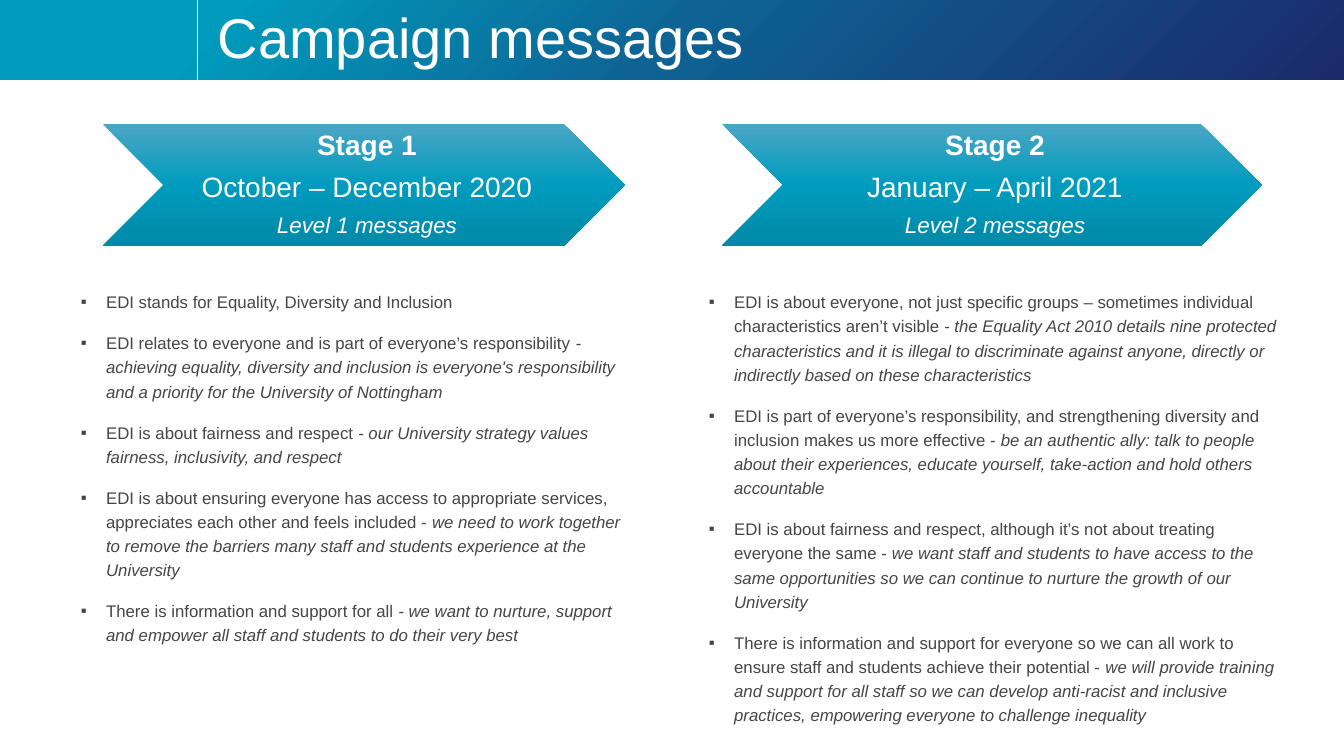
from lxml import etree
from pptx import Presentation, util as u
from pptx.dml.color import RGBColor
from pptx.enum import shapes, text
from pptx.oxml import ns

# Colours
WHITE = RGBColor(0xFF, 0xFF, 0xFF)
GREY = RGBColor(0x45, 0x45, 0x45)
TEAL = RGBColor(0x00, 0x9B, 0xBD)
LIGHT = RGBColor(0x4B, 0xA6, 0xC5)
DARK = RGBColor(0x00, 0x8A, 0xA8)
BLUE = RGBColor(0x0E, 0x63, 0x94)
NAVY = RGBColor(0x1B, 0x2A, 0x6B)

# Gradients as (percent, colour) stops
BAND = [(17, TEAL), (50, BLUE), (100, NAVY)]
ARROW = [(0, LIGHT), (50, TEAL), (100, DARK)]

# Paragraph formats
HEAD = {"line_spacing": 0.9}
STAGE = {"alignment": text.PP_ALIGN.CENTER, "line_spacing": 0.9, "space_after": u.Pt(8)}
BODY = {"line_spacing": 1.2, "space_after": u.Pt(6)}


class Deck:
    """Holds the style and the current slide."""

    font = "Arial"
    scale = 914400 / 100.8

    def __init__(self, wide, high):
        self.prs = Presentation()
        self.prs.slide_width, self.prs.slide_height = self.emu(wide, high)
        self.slide = self.prs.slides.add_slide(self.prs.slide_layouts[6])

    def emu(self, *px):
        return [u.Emu(round(n * self.scale)) for n in px]

    def style(self, item, form):
        for key, value in form.items():
            setattr(item, key, value)

    def shape(self, kind, box, stops, angle):
        item = self.slide.shapes.add_shape(kind, *self.emu(*box))
        item.shadow.inherit = False
        item.line.fill.background()
        item.fill.gradient()
        item.fill.gradient_angle = angle
        # Replace the default stops
        grad = item._element.spPr.find(".//" + ns.qn("a:gsLst"))
        for stop in list(grad):
            grad.remove(stop)
        for pct, color in stops:
            stop = etree.SubElement(grad, ns.qn("a:gs"), pos=str(pct * 1000))
            etree.SubElement(stop, ns.qn("a:srgbClr"), val=str(color))
        return item

    def line(self, x, y, x2, y2, color, width):
        item = self.slide.shapes.add_connector(
            shapes.MSO_CONNECTOR.STRAIGHT, *self.emu(x, y, x2, y2))
        item.line.color.rgb = color
        item.line.width = u.Pt(width)
        etree.SubElement(item._element.spPr, ns.qn("a:effectLst"))

    def box(self, box, anchor):
        frame = self.slide.shapes.add_textbox(*self.emu(*box)).text_frame
        self.style(frame, {"word_wrap": True, "vertical_anchor": anchor})
        return frame

    def bullet(self, para):
        props = para._p.get_or_add_pPr()
        indent = u.Inches(0.25)
        props.set("marL", str(indent))
        props.set("indent", str(-indent))
        etree.SubElement(props, ns.qn("a:buFont"), typeface=self.font)
        etree.SubElement(props, ns.qn("a:buChar"), char="▪")

    def fill(self, frame, paras, form, color, dot=False):
        """Each paragraph is a list of (words, size, font format) runs."""
        for i, runs in enumerate(paras):
            para = frame.paragraphs[0] if i == 0 else frame.add_paragraph()
            self.style(para, form)
            if dot:
                para.space_before = u.Pt(6 if i else 0)
                self.bullet(para)
            for words, size, look in runs:
                run = para.add_run()
                run.text = words
                self.style(run.font, {"name": self.font, "size": u.Pt(size), **look})
                run.font.color.rgb = color

    def arrow(self, box, name, dates, level):
        item = self.shape(shapes.MSO_SHAPE.CHEVRON, box, ARROW, 270)
        left, edge = self.emu(9, 3)
        self.style(item.text_frame, {
            "word_wrap": True, "vertical_anchor": text.MSO_ANCHOR.MIDDLE,
            "margin_left": left, "margin_right": edge,
            "margin_top": edge, "margin_bottom": edge})
        rows = [[(name, 20, {"bold": True})], [(dates, 20, {})],
                [(level, 16, {"italic": True})]]
        self.fill(item.text_frame, rows, STAGE, WHITE)

    def points(self, box, pairs):
        rows = [[(plain, 12, {}), (slant, 12, {"italic": True})] if slant
                else [(plain, 12, {})] for plain, slant in pairs]
        self.fill(self.box(box, text.MSO_ANCHOR.TOP), rows, BODY, GREY, dot=True)


FIRST = [
    ("EDI stands for Equality, Diversity and Inclusion", ""),
    ("EDI relates to everyone and is part of everyone’s responsibility ",
     "- achieving equality, diversity and inclusion is everyone's responsibility "
     "and a priority for the University of Nottingham"),
    ("EDI is about fairness and respect ",
     "- our University strategy values fairness, inclusivity, and respect"),
    ("EDI is about ensuring everyone has access to appropriate services, "
     "appreciates each other and feels included -",
     " we need to work together to remove the barriers many staff and students "
     "experience at the University"),
    ("There is information and support for all ",
     "- we want to nurture, support and empower all staff and students "
     "to do their very best"),
]
SECOND = [
    ("EDI is about everyone, not just specific groups – sometimes individual "
     "characteristics aren’t visible ",
     "- the Equality Act 2010 details nine protected characteristics and it is "
     "illegal to discriminate against anyone, directly or indirectly based on "
     "these characteristics"),
    ("EDI is part of everyone’s responsibility, and strengthening diversity and "
     "inclusion makes us more effective - ",
     "be an authentic ally: talk to people about their experiences, educate "
     "yourself, take-action and hold others accountable"),
    ("EDI is about fairness and respect, although it’s not about treating "
     "everyone the same -",
     " we want staff and students to have access to the same opportunities so we "
     "can continue to nurture the growth of our University"),
    ("There is information and support for everyone so we can all work to ensure "
     "staff and students achieve their potential -",
     " we will provide training and support for all staff so we can develop "
     "anti-racist and inclusive practices, empowering everyone to challenge "
     "inequality"),
]


def main():
    deck = Deck(1344, 756)

    # Title band
    deck.shape(shapes.MSO_SHAPE.RECTANGLE, (0, 0, 1344, 80), BAND, 315)
    deck.line(197, 0, 197, 80, WHITE, 0.5)
    title = deck.box((208, 0, 1110, 80), text.MSO_ANCHOR.MIDDLE)
    deck.fill(title, [[("Campaign messages", 40, {})]], HEAD, WHITE)

    # Stage arrows
    deck.arrow((103, 124, 522, 122), "Stage 1", "October – December 2020",
               "Level 1 messages")
    deck.arrow((722, 124, 540, 122), "Stage 2", "January – April 2021",
               "Level 2 messages")

    # Messages of each stage
    deck.points((71, 283, 563, 414), FIRST)
    deck.points((699, 283, 600, 454), SECOND)

    deck.prs.save("out.pptx")


if __name__ == "__main__":
    main()
